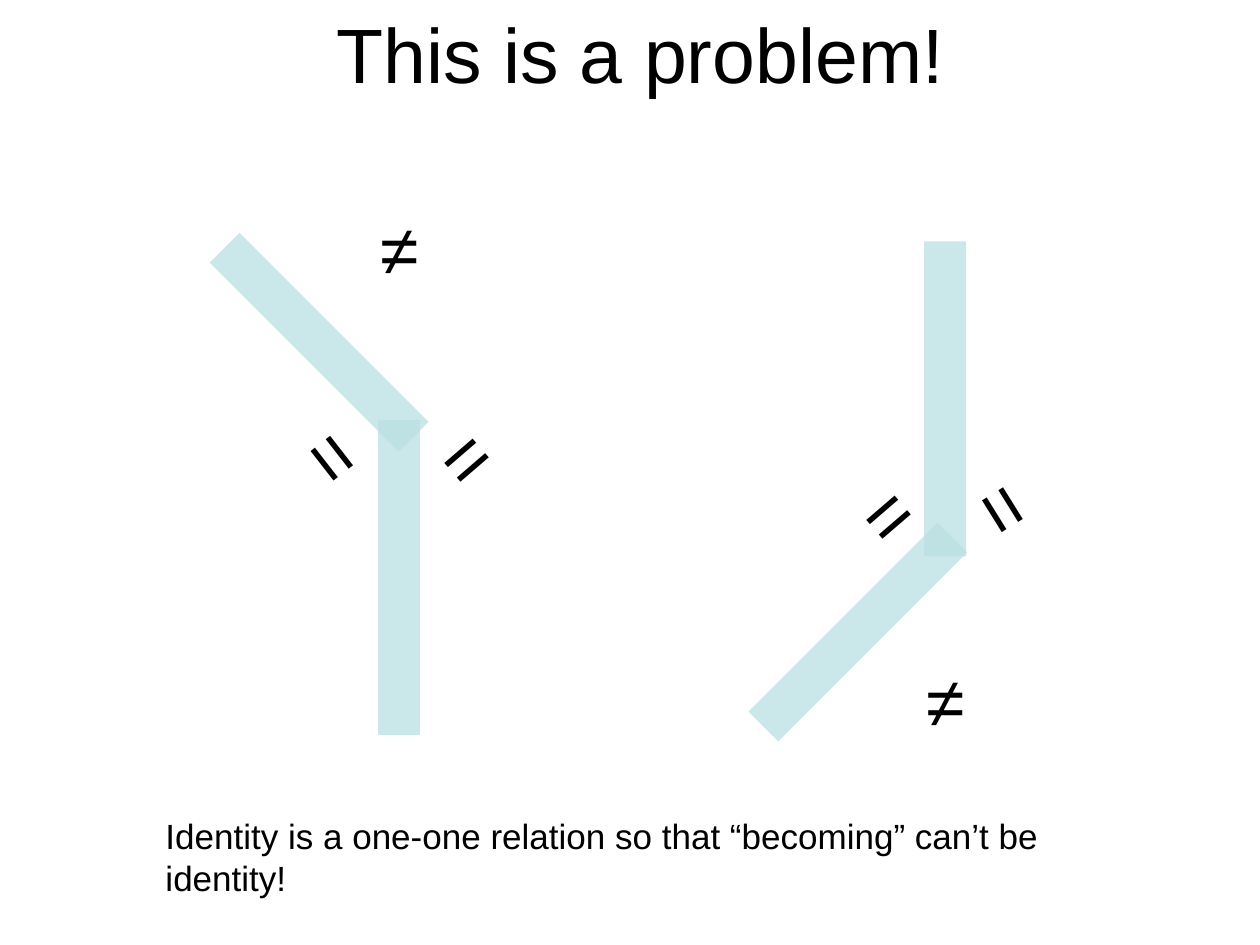
from pptx import Presentation
from pptx.dml.color import RGBColor
from pptx.enum.shapes import MSO_CONNECTOR
from pptx.enum.text import MSO_ANCHOR, MSO_AUTO_SIZE, PP_ALIGN
from pptx.oxml.ns import qn
from pptx.util import Inches, Pt
from lxml import etree

STRAIGHT = MSO_CONNECTOR.STRAIGHT
LEFT, CENTER = PP_ALIGN.LEFT, PP_ALIGN.CENTER
TOP, MIDDLE = MSO_ANCHOR.TOP, MSO_ANCHOR.MIDDLE
GROW, FIXED = MSO_AUTO_SIZE.SHAPE_TO_FIT_TEXT, MSO_AUTO_SIZE.NONE
WIDTH, HEIGHT = 10, 7.5
COLUMNS = 12


def color(value):
    return RGBColor.from_string(value)


def grid(*cells):
    return [Inches(c * WIDTH / COLUMNS) for c in cells]


def apply(obj, values):
    for name, value in values.items():
        setattr(obj, name, value)


class Deck:
    font = "Arial"
    ink = "000000"
    bar_color = "BBE0E3"
    bar_width = 24
    bar_opacity = 77

    def __init__(self):
        self.prs = Presentation()
        apply(self.prs, {"slide_width": Inches(WIDTH), "slide_height": Inches(HEIGHT)})
        self.s = self.prs.slides.add_slide(self.prs.slide_layouts[1])

    def set_text(self, sp, box, text, size, frame, paragraph):
        apply(sp, dict(zip(("left", "top", "width", "height"), grid(*box))))
        tf = sp.text_frame
        apply(tf, frame)
        p = tf.paragraphs[0]
        apply(p, paragraph)
        r = p.add_run()
        r.text = text
        apply(r.font, {"name": self.font, "size": Pt(size)})
        r.font.color.rgb = color(self.ink)
        return p

    def title(self, text, box):
        frame = {"vertical_anchor": MIDDLE, "auto_size": FIXED, "word_wrap": True}
        self.set_text(self.s.shapes.title, box, text, 44, frame, {"alignment": CENTER})

    def body(self, text, box):
        frame = {"vertical_anchor": TOP, "auto_size": FIXED, "word_wrap": True}
        spacing = {"alignment": LEFT, "space_before": Pt(4), "space_after": Pt(36)}
        p = self.set_text(self.s.placeholders[1], box, text, 20, frame, spacing)
        pPr = p._p.get_or_add_pPr()
        pPr.set("marL", str(Inches(0.38)))
        pPr.set("indent", "0")
        etree.SubElement(pPr, qn("a:buNone"))

    def bar(self, x1, y1, x2, y2):
        sp = self.s.shapes.add_connector(STRAIGHT, *grid(x1, y1, x2, y2))
        sp.line.width = Pt(self.bar_width)
        sp.line.color.rgb = color(self.bar_color)
        spPr = sp._element.spPr
        fill = spPr.find(".//" + qn("a:srgbClr"))
        etree.SubElement(fill, qn("a:alpha")).set("val", str(self.bar_opacity * 1000))
        etree.SubElement(spPr, qn("a:effectLst"))

    def sign(self, text, box, size, align=LEFT, rotation=0, wrap=False):
        sp = self.s.shapes.add_textbox(*grid(*box))
        sp.rotation = rotation
        frame = {"word_wrap": wrap, "auto_size": GROW}
        self.set_text(sp, box, text, size, frame, {"alignment": align})


def main():
    deck = Deck()
    deck.title("This is a problem!", (1, 0, 10.2, 1))
    deck.body("Identity is a one-one relation so that “becoming” can’t be identity!",
              (1, 7.7, 10.2, 1))

    stem, branch = 3, 1.8
    for x, y, rise in ((3.8, 4, stem), (9, 5.3, -stem)):
        deck.bar(x, y, x, y + rise)
    for x, y, rise in ((3.94, 4.16, -branch), (9.07, 5.12, branch)):
        deck.bar(x, y, x - branch, y + rise)

    for x, y in ((3.5, 1.9), (8.7, 6.2)):
        deck.sign("≠", (x, y, 0.61, 0.92), 40, CENTER)
    for x, y, width, rotation, wrap in (
        (4.1, 3.9, 0.5, 319.3, True),
        (2.87, 3.84, 0.67, 52.1, False),
        (9.26, 4.33, 0.67, 58.1, False),
        (8.12, 4.44, 0.5, 319.3, True),
    ):
        deck.sign("=", (x, y, width, 1), 44, LEFT, rotation, wrap)

    deck.prs.save("out.pptx")


if __name__ == "__main__":
    main()
